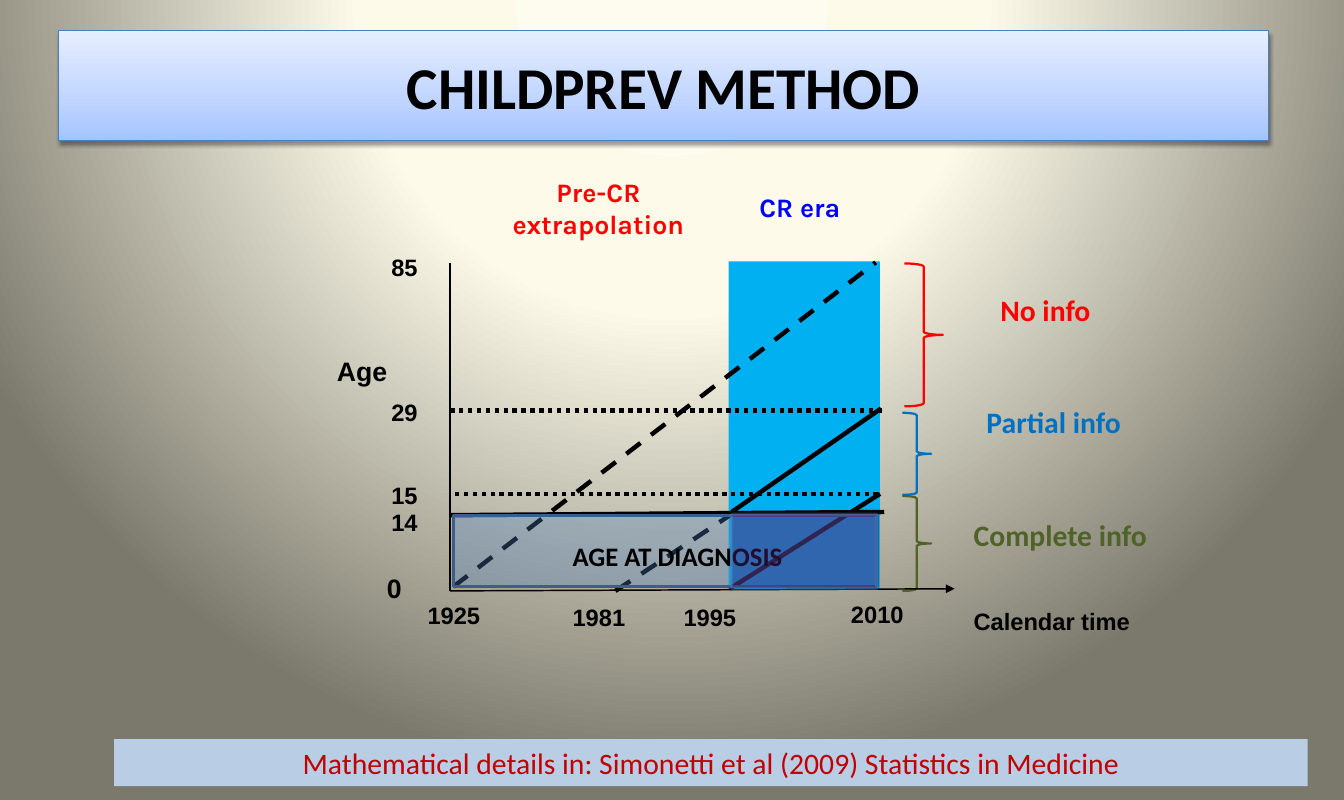
from lxml import etree
from pptx import Presentation
from pptx.dml.color import RGBColor
from pptx.enum.dml import MSO_LINE
from pptx.enum.shapes import MSO_CONNECTOR, MSO_SHAPE
from pptx.enum.text import MSO_ANCHOR, MSO_AUTO_SIZE, PP_ALIGN
from pptx.oxml.ns import qn
from pptx.util import Inches, Pt

RECT, BRACE = MSO_SHAPE.RECTANGLE, MSO_SHAPE.RIGHT_BRACE
STRAIGHT = MSO_CONNECTOR.STRAIGHT
DASH, DOT = MSO_LINE.DASH, MSO_LINE.ROUND_DOT
LEFT, CENTER = PP_ALIGN.LEFT, PP_ALIGN.CENTER
TOP, MIDDLE = MSO_ANCHOR.TOP, MSO_ANCHOR.MIDDLE
GROW = MSO_AUTO_SIZE.SHAPE_TO_FIT_TEXT
BLACK, RED, BLUE = "000000", "FF0000", "0070C0"


def rgb(value):
    return RGBColor.from_string(value)


def sub(parent, tag, **attributes):
    return etree.SubElement(parent, qn(tag), attributes)


def set_opacity(fill, percent):
    """Make a solid fill see-through."""
    color = fill._xPr.find(qn("a:solidFill"))[0]
    sub(color, "a:alpha", val=str(percent * 1000))


def set_gradient(holder, stops):
    """Put a gradient in place of the solid fill directly in holder."""
    solid = holder.find(qn("a:solidFill"))
    gradient = etree.Element(qn("a:gradFill"), rotWithShape="1")
    stop_list = sub(gradient, "a:gsLst")
    for position, color in stops:
        stop = sub(stop_list, "a:gs", pos=str(position * 1000))
        sub(stop, "a:srgbClr", val=color)
    holder.replace(solid, gradient)
    return gradient


def write(shape, text, size, color, font="Arial", bold=True, align=LEFT,
          wrap=True, anchor=TOP, grow=True):
    frame = shape.text_frame
    frame.text = text
    layout = {"word_wrap": wrap, "vertical_anchor": anchor}
    if grow:
        layout["auto_size"] = GROW
    for name, value in layout.items():
        setattr(frame, name, value)
    for paragraph in frame.paragraphs:
        paragraph.alignment = align
        style = {"size": Pt(size), "name": font, "bold": bold}
        for name, value in style.items():
            setattr(paragraph.runs[0].font, name, value)
        paragraph.runs[0].font.color.rgb = rgb(color)


def add_text(slide, box, text, size, color=BLACK, **style):
    write(slide.shapes.add_textbox(*map(Inches, box)), text, size, color, **style)


def add_box(slide, box, kind=RECT, fill=None, opacity=None, line=None, width=1):
    shape = slide.shapes.add_shape(kind, *map(Inches, box))
    shape.shadow.inherit = False
    if fill:
        shape.fill.solid()
        shape.fill.fore_color.rgb = rgb(fill)
        if opacity:
            set_opacity(shape.fill, opacity)
    else:
        shape.fill.background()
    if line:
        shape.line.color.rgb = rgb(line)
        shape.line.width = Pt(width)
    else:
        shape.line.fill.background()
    return shape


def add_line(slide, ends, width=3, dash=None, arrow=False):
    connector = slide.shapes.add_connector(STRAIGHT, *map(Inches, ends))
    connector.line.color.rgb = rgb(BLACK)
    connector.line.width = Pt(width)
    if dash:
        connector.line.dash_style = dash
    if arrow:
        sub(connector.line._get_or_add_ln(), "a:tailEnd", type="triangle")
    sub(connector._element.spPr, "a:effectLst")


def paint_background(slide):
    slide.background.fill.solid()
    holder = slide.element.find(".//" + qn("p:bgPr"))
    gradient = set_gradient(holder, [(0, "FEFCEE"), (40, "FDFAEA"), (100, "7B796B")])
    circle = sub(gradient, "a:path", path="circle")
    sub(circle, "a:fillToRect", l="50000", t="-80000", r="50000", b="180000")


def add_title(slide, box):
    banner = add_box(slide, box, fill="BFD4FF", line="4B7EBC", width=0.75)
    properties = banner._element.spPr
    gradient = set_gradient(properties, [(0, "A4C4FF"), (35, "BFD4FF"), (100, "E6EEFF")])
    sub(gradient, "a:lin", ang="16200000", scaled="0")
    shadow = sub(properties.find(qn("a:effectLst")), "a:outerShdw",
                 blurRad=str(Pt(3.1)), dist=str(Pt(1.6)), dir="5400000", rotWithShape="0")
    sub(sub(shadow, "a:srgbClr", val=BLACK), "a:alpha", val="38000")
    write(banner, "CHILDPREV METHOD", 40, BLACK, font="Calibri",
          align=CENTER, anchor=MIDDLE, grow=False)


def add_info_levels(slide, box):
    """Braces beside the age ranges, each with its level of information."""
    left, top, width, _ = box
    levels = [
        ("No info", RED, (0.02, 0, 0.36, 1.34), 0.82, 0.22),
        ("Partial info", BLUE, (0, 1.4, 0.27, 0.77), 0.69, 1.27),
        ("Complete info", "4F6228", (0, 2.18, 0.27, 0.89), 0.57, 2.33),
    ]
    for label, color, (x, y, w, h), label_x, label_y in levels:
        add_box(slide, (left + x, top + y, w, h), BRACE, line=color, width=1.5)
        add_text(slide, (left + label_x, top + label_y, width - 0.57, 0.44),
                 label, 20, color, font="Calibri")


def add_lexis_diagram(slide, box):
    """Age against calendar time, with cohorts as diagonals."""
    left, top, width, height = box

    def place(x, y, w, h):
        return left + x, top + y, w, h

    def line(x1, y1, x2, y2, **style):
        add_line(slide, (left + x1, top + y1, left + x2, top + y2), **style)

    add_box(slide, place(2.61, -0.02, 1.42, 3.08), fill="00B0F0")

    for age, y in [("85", -0.15), ("29", 1.21), ("15", 1.99), ("14", 2.24)]:
        add_text(slide, place(-0.65, y, 0.45, 0.37), age, 16, wrap=False)
    add_text(slide, place(-0.69, 2.84, 0.34, 0.4), "0", 18, wrap=False)
    add_text(slide, place(-1.16, 0.81, 0.68, 0.4), "Age", 18, wrap=False)

    years = [("1925", -0.31, 3.11), ("1981", 1.05, 3.13),
             ("1995", 2.09, 3.13), ("2010", 3.66, 3.1)]
    for year, x, y in years:
        add_text(slide, place(x, y, 0.7, 0.37), year, 16, wrap=False)
    add_text(slide, place(4.81, 3.17, 2.43, 0.37), "Calendar time", 16)

    line(0, height, width, height - 0.02, width=1, arrow=True)
    line(0, 0, 0, height, width=1)
    line(0, 1.38, 4.07, 1.38, dash=DOT)
    line(0.03, 3.03, 3.99, -0.01, dash=DASH)
    line(1.55, 3.07, 2.64, 2.35, dash=DASH)
    line(4.07, 2.33, 0, 2.36)
    line(4.01, 2.16, 0, 2.16, dash=DOT)
    line(2.62, 3.05, 4.03, 2.16)
    line(2.64, 2.33, 4.04, 1.36)

    add_text(slide, place(2.8, -0.73, 1.04, 0.4), "CR era", 18, "0000FF",
             font="Karla", wrap=False)
    add_text(slide, place(0.2, -0.87, 2.38, 0.71), "Pre-CR\nextrapolation", 18, RED,
             font="Karla", align=CENTER)

    add_box(slide, place(0.03, 2.36, 3.98, 0.67), fill="4F81BD", opacity=33,
            line="3A5F8C", width=2)
    add_text(slide, place(1.05, 2.54, 2.6, 0.4), "AGE AT DIAGNOSIS", 18, font="Calibri")
    observed = add_box(slide, place(2.64, 2.35, 1.36, 0.7), fill="4D1E6F", opacity=44,
                       line="4F81BD", width=2)
    set_opacity(observed.line.fill, 40)


def add_reference(slide, box):
    banner = add_box(slide, box, fill="B9CDE5")
    write(banner, "Mathematical details in: Simonetti et al (2009) Statistics in Medicine",
          20, "C00000", font="Calibri", bold=False, align=CENTER)


def main():
    deck = Presentation()
    deck.slide_width, deck.slide_height = Inches(12.6), Inches(7.5)
    slide = deck.slides.add_slide(deck.slide_layouts[6])
    paint_background(slide)
    add_title(slide, (0.55, 0.29, 11.34, 1.03))
    add_info_levels(slide, (8.46, 2.47, 2.67, 3.07))
    add_lexis_diagram(slide, (4.22, 2.47, 4.73, 3.07))
    add_reference(slide, (1.07, 6.93, 11.19, 0.44))
    deck.save("out.pptx")


if __name__ == "__main__":
    main()
